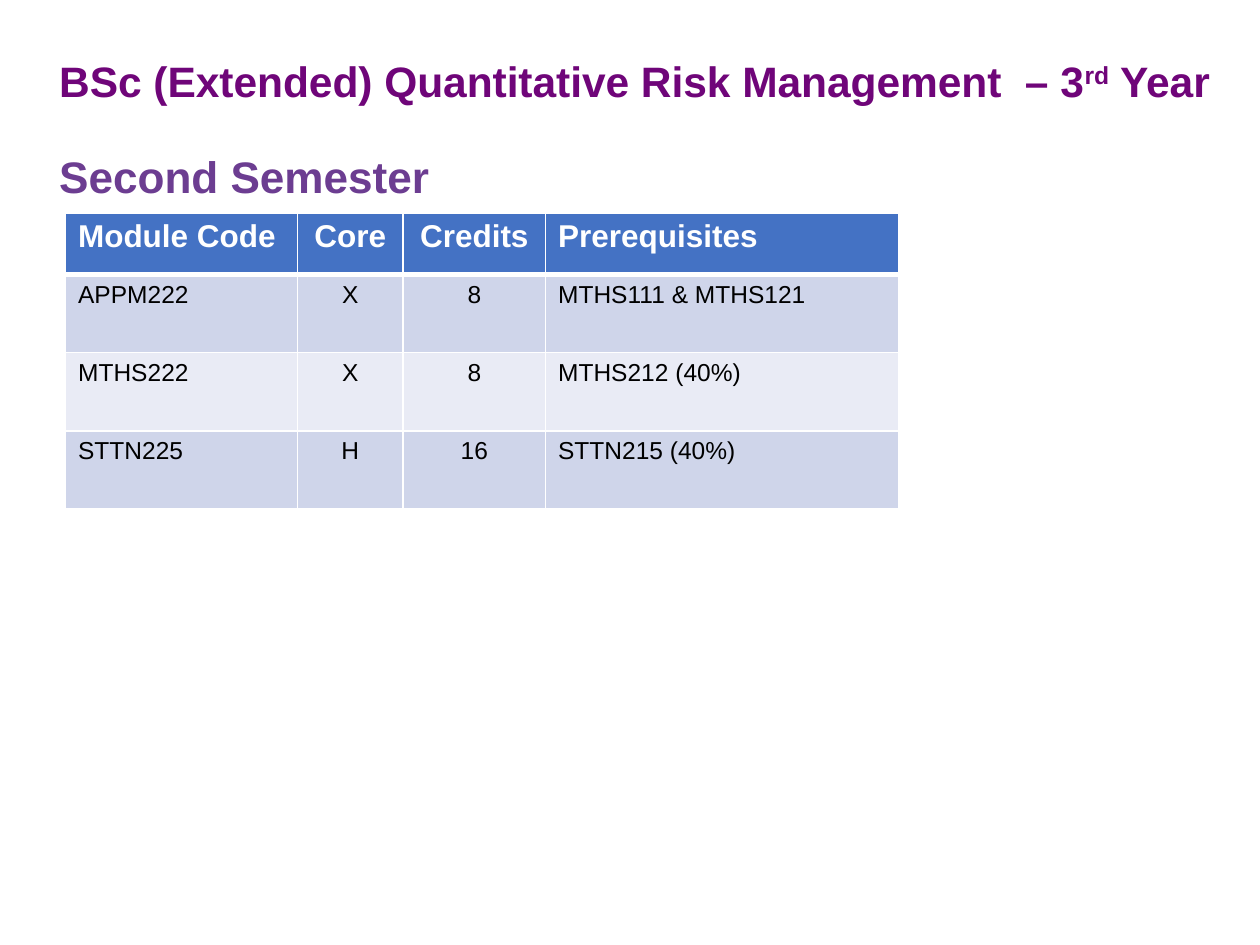
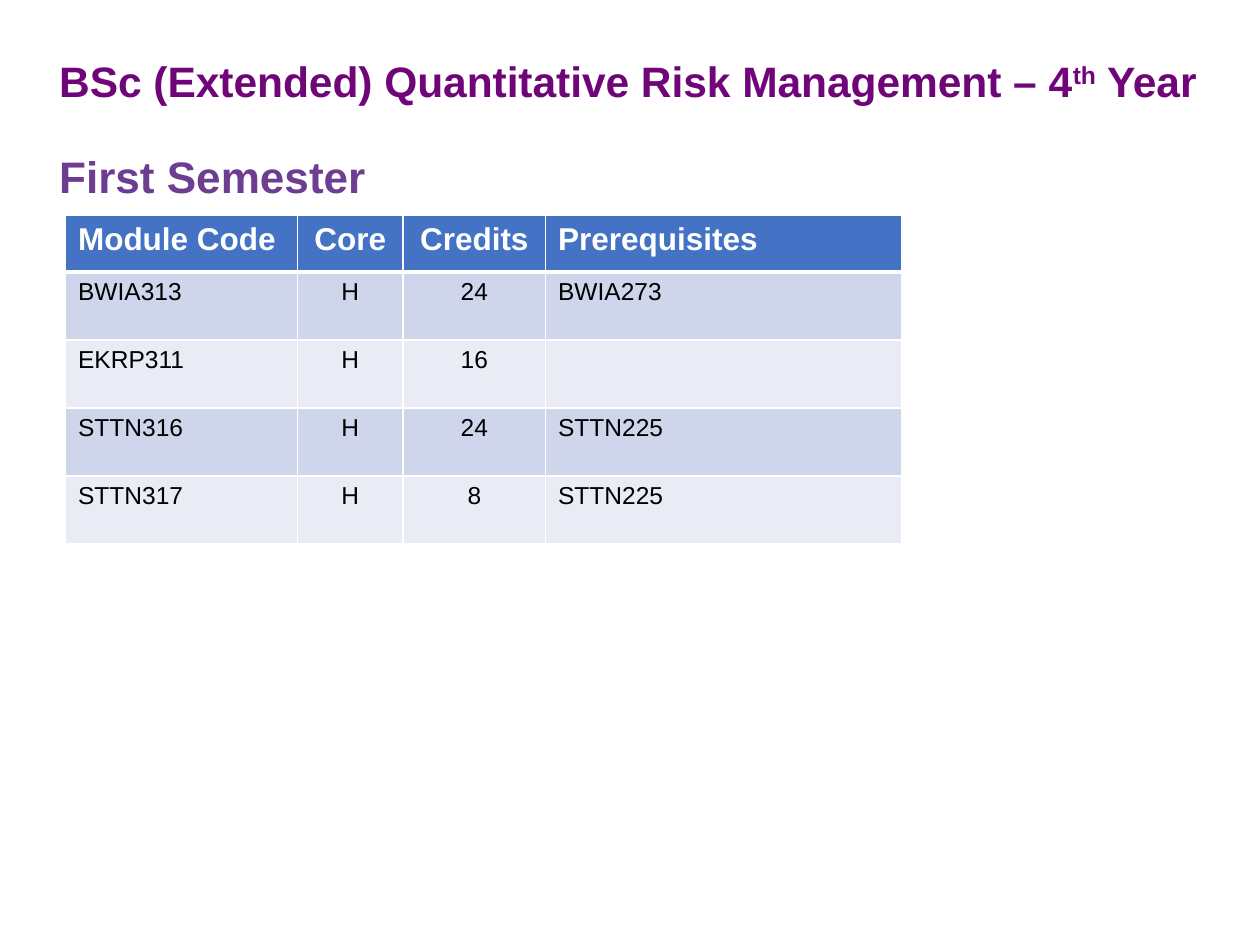
import pptx
import pptx.util
import pptx.dml.color
import pptx.enum.text
import pptx.oxml
import pptx.oxml.ns

Inches, Pt = pptx.util.Inches, pptx.util.Pt
ALIGN = pptx.enum.text.PP_ALIGN
FONT = "Arial"
PURPLE, VIOLET, WHITE, BLACK = "6F0579", "6C3D91", "FFFFFF", "000000"
BLUE, BANDS = "4472C4", ("CFD5EA", "E9EBF5")
HEADS = ("Module Code", "Core", "Credits", "Prerequisites")
CENTRED = (1, 2)


def color(code):
    return pptx.dml.color.RGBColor.from_string(code)


class Deck:
    title_font = {"name": FONT, "size": Pt(24.3), "bold": True}
    term_font = {"name": FONT, "size": Pt(25.2), "bold": True}
    head_font = {"name": FONT, "size": Pt(18), "bold": True}
    cell_font = {"name": FONT, "size": Pt(14), "bold": False}

    def __init__(self):
        self.show = pptx.Presentation()
        self.show.slide_width = Inches(10)
        self.show.slide_height = Inches(7.5)
        self.slide = None

    def page(self):
        self.slide = self.show.slides.add_slide(self.show.slide_layouts[5])

    def add_text(self, para, text, style, shade, raised=False):
        run = para.add_run()
        run.text = text
        for key, value in style.items():
            setattr(run.font, key, value)
        run.font.color.rgb = color(shade)
        if raised:
            run._r.get_or_add_rPr().set("baseline", "30000")

    def title(self, course, suffix, term, width, height):
        box = self.slide.shapes.title
        place = {"left": 0.37, "top": 0.4, "width": width, "height": height}
        for key, value in place.items():
            setattr(box, key, Inches(value))
        frame = box.text_frame
        layout = {"word_wrap": True,
                  "auto_size": pptx.enum.text.MSO_AUTO_SIZE.NONE,
                  "vertical_anchor": pptx.enum.text.MSO_ANCHOR.TOP,
                  "margin_left": Inches(0.1), "margin_right": 0,
                  "margin_top": Inches(0.08)}
        for key, value in layout.items():
            setattr(frame, key, value)
        first, second = frame.paragraphs[0], frame.add_paragraph()
        for para in (first, second):
            para.alignment = ALIGN.LEFT
            para.line_spacing = 0.9
        second.space_before = Pt(28)
        self.add_text(first, course, self.title_font, PURPLE)
        self.add_text(first, suffix, self.title_font, PURPLE, raised=True)
        self.add_text(first, " Year", self.title_font, PURPLE)
        self.add_text(second, term, self.term_font, VIOLET)

    def border(self, cell, top, bottom):
        props = cell._tc.get_or_add_tcPr()
        sides = (("L", 1), ("R", 1), ("T", top), ("B", bottom))
        for spot, (side, points) in enumerate(sides):
            props.insert(spot, pptx.oxml.parse_xml(
                f'<a:ln{side} {pptx.oxml.ns.nsdecls("a")} w="{Pt(points)}">'
                f'<a:solidFill><a:srgbClr val="{WHITE}"/></a:solidFill>'
                f'</a:ln{side}>'))

    def table(self, top, last, head, step, modules):
        """Draw the modules; last is the width of the final column."""
        widths = (1.84, 0.84, 1.13, last)
        heights = [head] + [step] * len(modules)
        grid = self.slide.shapes.add_table(
            len(heights), len(widths), Inches(0.52), Inches(top),
            Inches(sum(widths)), Inches(sum(heights))).table
        for column, width in zip(grid.columns, widths):
            column.width = Inches(width)
        for row, height in zip(grid.rows, heights):
            row.height = Inches(height)
        for r, texts in enumerate((HEADS, *modules)):
            style, shade, fill = ((self.cell_font, BLACK, BANDS[(r - 1) % 2])
                                  if r else (self.head_font, WHITE, BLUE))
            for c, text in enumerate(texts):
                cell = grid.cell(r, c)
                cell.fill.solid()
                cell.fill.fore_color.rgb = color(fill)
                self.border(cell, 3 if r == 1 else 1, 1 if r else 3)
                para = cell.text_frame.paragraphs[0]
                para.alignment = ALIGN.CENTER if c in CENTRED else ALIGN.LEFT
                if text:
                    self.add_text(para, text, style, shade)


def main():
    deck = Deck()

    deck.page()
    deck.title("BSc (Extended) Quantitative Risk Management  – 3", "rd",
               "Second Semester", 9.33, 0.54)
    deck.table(1.69, 2.8, 0.49, 0.62, (
        ("APPM222", "X", "8", "MTHS111 & MTHS121"),
        ("MTHS222", "X", "8", "MTHS212 (40%)"),
        ("STTN225", "H", "16", "STTN215 (40%)")))

    deck.page()
    deck.title("BSc (Extended) Quantitative Risk Management – 4", "th",
               "First Semester", 9.25, 0.6)
    deck.table(1.71, 2.83, 0.45, 0.54, (
        ("BWIA313", "H", "24", "BWIA273"),
        ("EKRP311", "H", "16", ""),
        ("STTN316", "H", "24", "STTN225"),
        ("STTN317", "H", "8", "STTN225")))

    deck.show.save("out.pptx")


if __name__ == "__main__":
    main()
